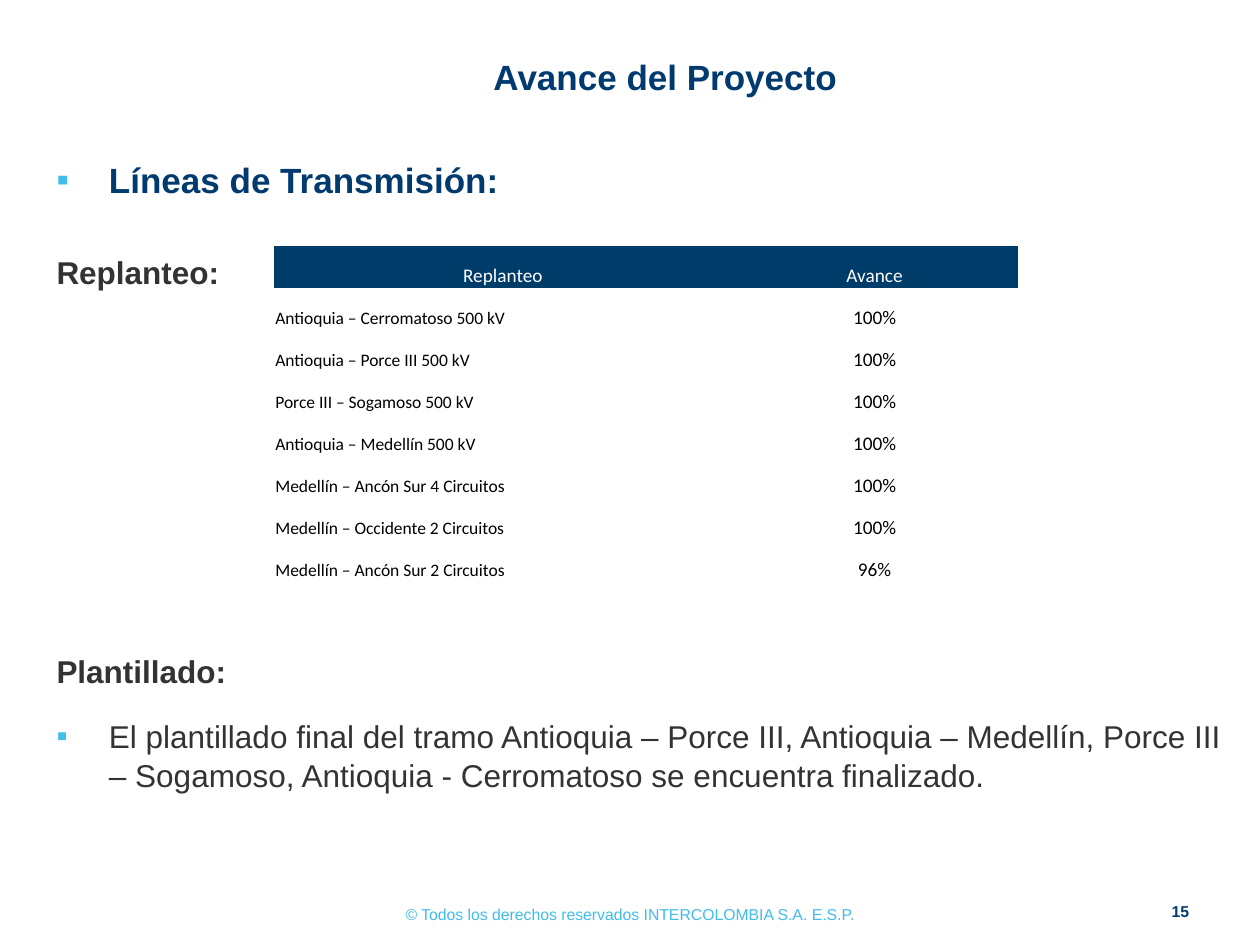
from lxml import etree
from pptx import Presentation
from pptx.dml.color import RGBColor
from pptx.enum import text as t
from pptx.oxml import ns
from pptx.util import Pt

COLORS = {"navy": "003A6F", "header": "003C69", "sky": "40BDE8",
          "body": "333333", "white": "FFFFFF", "black": "000000"}
NO_STYLE = "{2D5ABB26-0587-4C30-8999-92F81FD0307C}"
PROGRESS = [
    ("Replanteo", "Avance"),
    ("Antioquia – Cerromatoso 500 kV", "100%"),
    ("Antioquia – Porce III 500 kV", "100%"),
    ("Porce III – Sogamoso 500 kV", "100%"),
    ("Antioquia – Medellín 500 kV", "100%"),
    ("Medellín – Ancón Sur 4 Circuitos", "100%"),
    ("Medellín – Occidente 2 Circuitos", "100%"),
    ("Medellín – Ancón Sur 2 Circuitos", "96%"),
]
BODY = [
    ("Líneas de Transmisión:", 20, "navy", True, True, 0),
    ("Replanteo:", 18, "body", True, False, 29),
    ("Plantillado:", 18, "body", True, False, 205),
    ("El plantillado final del tramo Antioquia – Porce III, Antioquia – Medellín, "
     "Porce III – Sogamoso, Antioquia - Cerromatoso se encuentra finalizado.",
     18, "body", False, True, 14.3),
]


def style(paragraph, size, color, bold=False, name="Arial"):
    """Set the font of a whole paragraph."""
    font = paragraph.font
    font.size, font.bold, font.name = Pt(size), bold, name
    font.color.rgb = RGBColor.from_string(COLORS[color])


def add_frame(slide, box):
    """Add a wrapping text box and return its text frame."""
    frame = slide.shapes.add_textbox(*map(Pt, box)).text_frame
    frame.word_wrap = True
    return frame


def add_line(slide, box, wording, size, color, bold, anchor):
    """Add one centred line of text and return its frame."""
    frame = add_frame(slide, box)
    frame.vertical_anchor = anchor
    line = frame.paragraphs[0]
    line.text, line.alignment = wording, t.PP_ALIGN.CENTER
    style(line, size, color, bold)
    return frame


def add_bullet(paragraph, indent):
    """Give a paragraph a hanging square bullet."""
    props = paragraph._p.get_or_add_pPr()
    props.set("marL", str(Pt(indent)))
    props.set("indent", str(-Pt(indent)))
    color = etree.SubElement(props, ns.qn("a:buClr"))
    etree.SubElement(color, ns.qn("a:srgbClr"), val=COLORS["sky"])
    etree.SubElement(props, ns.qn("a:buFont"), typeface="Arial")
    etree.SubElement(props, ns.qn("a:buChar"), char="▪")


def add_body(slide, box):
    """Add the headings and the closing bullet."""
    frame = add_frame(slide, box)
    frame.margin_top, frame.margin_right = Pt(4.5), Pt(10)
    for index, (wording, size, color, bold, bulleted, gap) in enumerate(BODY):
        paragraph = frame.add_paragraph() if index else frame.paragraphs[0]
        paragraph.text = wording
        if bulleted:
            add_bullet(paragraph, 30)
        paragraph.line_spacing = 1.05
        if gap:
            paragraph.space_before = Pt(gap)
        style(paragraph, size, color, bold)


def add_progress(slide, box):
    """Add the table of staking progress by line."""
    left, top, width, height = box
    table = slide.shapes.add_table(len(PROGRESS), 2, *map(Pt, box)).table
    table.first_row = table.horz_banding = False
    table._tbl.tblPr.find(ns.qn("a:tableStyleId")).text = NO_STYLE
    first_width = 261.4
    table.columns[0].width = Pt(first_width)
    table.columns[1].width = Pt(width - first_width)
    for r, entries in enumerate(PROGRESS):
        table.rows[r].height = Pt(height / len(PROGRESS))
        for c, entry in enumerate(entries):
            cell = table.cell(r, c)
            cell.margin_left = cell.margin_right = cell.margin_top = Pt(0.7)
            cell.margin_bottom = 0
            cell.vertical_anchor = t.MSO_ANCHOR.BOTTOM
            is_header, is_name = r == 0, r > 0 and c == 0
            if is_header:
                cell.fill.solid()
                cell.fill.fore_color.rgb = RGBColor.from_string(COLORS["header"])
            else:
                cell.fill.background()
            line = cell.text_frame.paragraphs[0]
            line.text = entry
            line.alignment = t.PP_ALIGN.LEFT if is_name else t.PP_ALIGN.CENTER
            style(line, 10 if is_name else 11,
                  "white" if is_header else "black", name="Calibri")


def main():
    """Build the slide and save it."""
    deck = Presentation()
    deck.slide_width, deck.slide_height = Pt(720), Pt(540)
    slide = deck.slides.add_slide(deck.slide_layouts[6])
    add_line(slide, (195.8, 513.4, 328.3, 18), "© Todos los derechos reservados INTERCOLOMBIA S.A. E.S.P.",
             9, "sky", False, t.MSO_ANCHOR.TOP)
    add_line(slide, (124.6, 24.5, 511.2, 39), "Avance del Proyecto",
             20, "navy", True, t.MSO_ANCHOR.MIDDLE)
    add_body(slide, (25.2, 85, 694.8, 409.7))
    number = add_line(slide, (656.6, 511.2, 28.8, 18.7), "15",
                      9, "navy", True, t.MSO_ANCHOR.BOTTOM)
    number.margin_right = 0
    add_progress(slide, (156.7, 140.4, 424.8, 192))
    deck.save("out.pptx")


if __name__ == "__main__":
    main()
